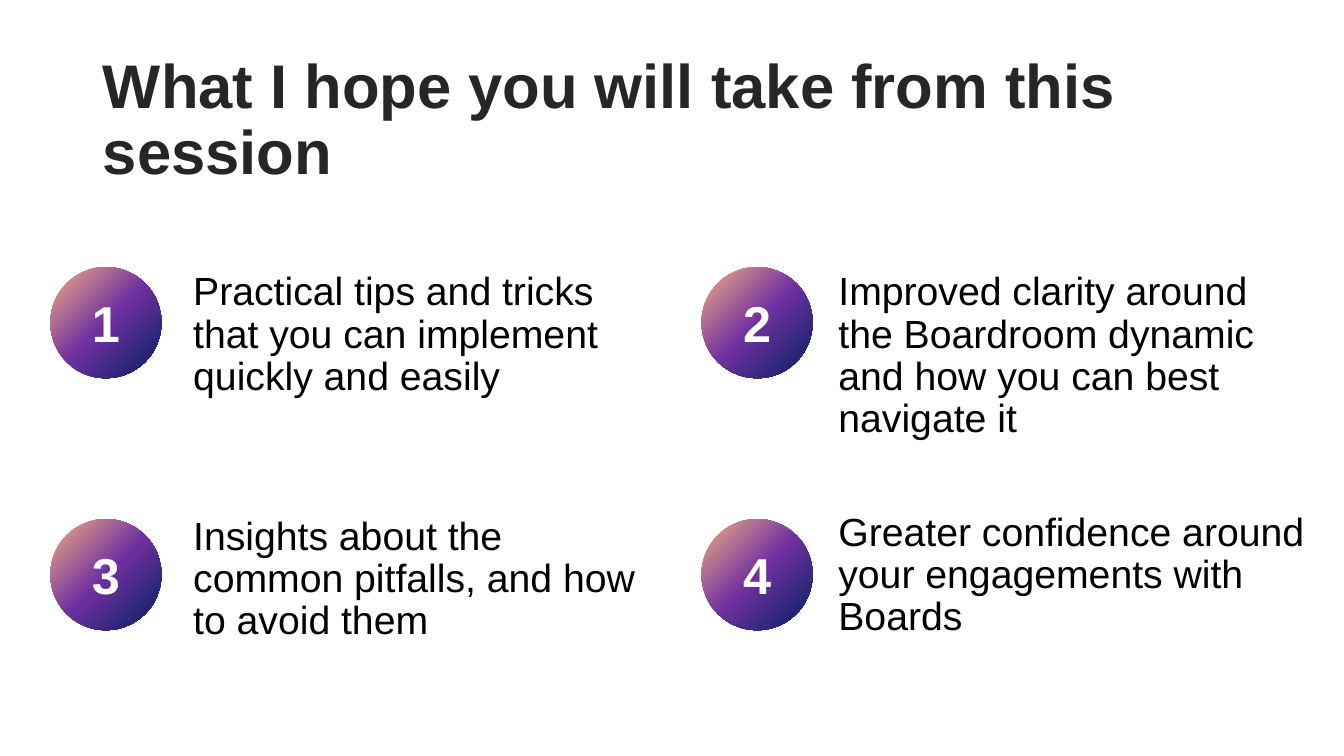
from copy import deepcopy

from pptx import Presentation
from pptx.dml.color import RGBColor
from pptx.enum.shapes import MSO_SHAPE
from pptx.enum.text import MSO_ANCHOR, MSO_AUTO_SIZE, PP_ALIGN
from pptx.oxml.ns import qn
from pptx.util import Cm, Pt

COLOURS = {
    "title": "262626",
    "body": "000000",
    "number": "FFFFFF",
    "peach": "F4B183",
    "purple": "7030A0",
    "navy": "002060",
}
BADGE_STOPS = [(0, "peach"), (0.5, "purple"), (1, "navy")]

TITLE = "What I hope you will take from this session"
# Each column: its takeaways from top to bottom, and the gap between them in points
COLUMNS = [
    (["Practical tips and tricks that you can implement quickly and easily",
      "Insights about the common pitfalls, and how to avoid them"], 83.7),
    (["Improved clarity around the Boardroom dynamic and how you can best navigate it",
      "Greater confidence around your engagements with Boards"], 50.6),
]

GRID_TOP = 6.73
BADGE_LEFT, BADGE_SIZE = 1.27, 2.8
BADGE_COLUMN_STEP, BADGE_ROW_STEP = 16.41, 6.35
TEXT_LEFT, TEXT_COLUMN_STEP = 4.62, 16.26
TEXT_WIDTH, TEXT_HEIGHT = 12.32, 10.64


class SlideBuilder:
    font_name = "Arial"

    def __init__(self, deck):
        self.page = deck.slides.add_slide(deck.slide_layouts[5])

    def style(self, paragraph, size, colour, bold=False, align=PP_ALIGN.LEFT):
        paragraph.alignment = align
        for span in paragraph.runs:
            span.font.name = self.font_name
            span.font.size = Pt(size)
            span.font.bold = bold
            span.font.color.rgb = RGBColor.from_string(COLOURS[colour])

    def title(self, text, left, top, width, height):
        box = self.page.shapes.title
        box.left, box.top, box.width, box.height = map(Cm, (left, top, width, height))
        frame = box.text_frame
        frame.text = text
        frame.auto_size = MSO_AUTO_SIZE.NONE
        frame.vertical_anchor = MSO_ANCHOR.MIDDLE
        frame.paragraphs[0].line_spacing = 0.9
        self.style(frame.paragraphs[0], 44, "title", bold=True)

    def takeaways(self, texts, gap, left, top, width, height):
        box = self.page.shapes.add_textbox(*map(Cm, (left, top, width, height)))
        frame = box.text_frame
        frame.word_wrap = True
        frame.text = "\n".join(texts)
        for index, paragraph in enumerate(frame.paragraphs):
            paragraph.line_spacing = 0.9
            paragraph.space_before = Pt(gap if index else 10)
            self.style(paragraph, 28, "body")

    def badge(self, number, left, top, size):
        badge = self.page.shapes.add_shape(
            MSO_SHAPE.OVAL, *map(Cm, (left, top, size, size)))
        badge.shadow.inherit = False
        badge.line.fill.background()
        self.gradient(badge)
        frame = badge.text_frame
        frame.text = str(number)
        frame.vertical_anchor = MSO_ANCHOR.MIDDLE
        self.style(frame.paragraphs[0], 36, "number", bold=True, align=PP_ALIGN.CENTER)

    def gradient(self, shape):
        """Fill the shape with the three badge colours, from top left to bottom right."""
        shape.fill.gradient()
        shape.fill.gradient_angle = 315
        stop_list = next(shape._element.spPr.iter(qn("a:gsLst")))
        stop_list.append(deepcopy(stop_list[0]))
        for stop, (position, colour) in zip(shape.fill.gradient_stops, BADGE_STOPS):
            stop.position = position
            stop.color.rgb = RGBColor.from_string(COLOURS[colour])


def main():
    deck = Presentation()
    deck.slide_width, deck.slide_height = Cm(33.87), Cm(19.05)
    builder = SlideBuilder(deck)
    builder.title(TITLE, 2.34, 1.22, 29.21, 3.68)

    for column, (texts, gap) in enumerate(COLUMNS):
        builder.takeaways(texts, gap, TEXT_LEFT + column * TEXT_COLUMN_STEP,
                          GRID_TOP, TEXT_WIDTH, TEXT_HEIGHT)
    for index in range(4):
        row, column = divmod(index, 2)
        builder.badge(index + 1, BADGE_LEFT + column * BADGE_COLUMN_STEP,
                      GRID_TOP + row * BADGE_ROW_STEP, BADGE_SIZE)
    deck.save("out.pptx")


if __name__ == "__main__":
    main()
